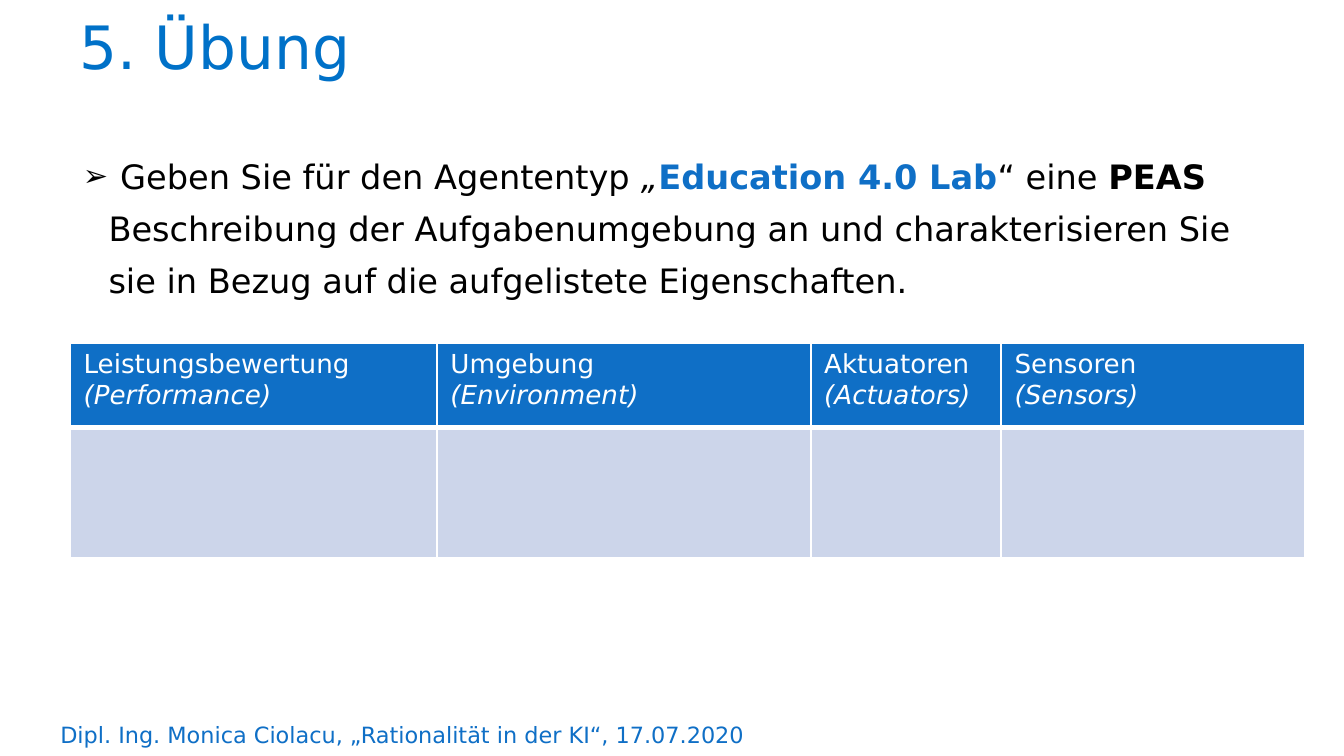
"""Build the exercise slide with a PEAS task and its answer table."""
from lxml.etree import SubElement as Sub
from pptx import Presentation
from pptx.dml.color import RGBColor as RGB
from pptx.oxml.ns import qn
from pptx.util import Pt

THEME = {
    "font": "DejaVu Sans",
    "title": "0071C8", "accent": "0F6FC6", "text": "000000",
    "light": "FFFFFF", "cell": "CCD5EA",
    "title_size": 32, "body_size": 18, "table_size": 14, "footer_size": 12,
}
TITLE = [("5. Übung", {})]
TASK = [
    (" ", {"bold": True}),
    ("Geben Sie für den Agententyp ", {}),
    ("„", {"italic": True}),
    ("Education 4.0 Lab", {"bold": True, "color": "accent"}),
    ("“ eine ", {}),
    ("PEAS", {"bold": True}),
    (" Beschreibung der Aufgabenumgebung an und charakterisieren Sie "
     "sie in Bezug auf die aufgelistete Eigenschaften.", {}),
]
FOOTER = [("Dipl. Ing. Monica Ciolacu, „Rationalität in der KI“, 17.07.2020", {})]
COLUMNS = [
    ("Leistungsbewertung", "(Performance)", 196.5),
    ("Umgebung", "(Environment)", 200.25),
    ("Aktuatoren", "(Actuators)", 102),
    ("Sensoren", "(Sensors)", 162.75),
]
ROWS = [45.4, 69.8]
TABLE_AT = (37.6, 183.6)
BOXES = [
    (FOOTER, (25.2, 383, 442.8, 21.6), "footer_size", "accent", {}),
    (TITLE, (37.4, 6.5, 439.2, 49.7), "title_size", "title",
     {"line_spacing": 0.9, "space_before": Pt(7.5)}),
    (TASK, (37.4, 73.4, 653, 220.3), "body_size", "text",
     {"line_spacing": 1.3, "space_before": Pt(7.5)}),
]
TITLE_INSETS = {"margin_left": 5, "margin_right": 5, "margin_top": 2.9, "margin_bottom": 2.9}


def apply(obj, values):
    for name, value in values.items():
        setattr(obj, name, value)


def add_runs(p, runs, size, color):
    for text, style in runs:
        r = p.add_run()
        r.text = text
        style = dict(style)
        r.font.color.rgb = RGB.from_string(THEME[style.pop("color", color)])
        apply(r.font, {"name": THEME["font"], "size": Pt(THEME[size]), **style})


def add_text(s, runs, at, size, color, spacing):
    tf = s.shapes.add_textbox(*map(Pt, at)).text_frame
    tf.word_wrap = True
    p = tf.paragraphs[0]
    apply(p, spacing)
    add_runs(p, runs, size, color)
    return tf


def add_bullet(p, char, indent, percent):
    pPr = p._p.get_or_add_pPr()
    pPr.set("marL", str(Pt(indent)))
    pPr.set("indent", str(-Pt(indent)))
    Sub(pPr, qn("a:buSzPct"), val=str(percent * 1000))
    Sub(pPr, qn("a:buFont"), typeface=THEME["font"])
    Sub(pPr, qn("a:buChar"), char=char)


def fill_cell(cell, color, top, bottom):
    tcPr = cell._tc.get_or_add_tcPr()
    for side, width in (("L", 1), ("R", 1), ("T", top), ("B", bottom)):
        ln = Sub(tcPr, qn(f"a:ln{side}"), w=str(Pt(width)))
        Sub(Sub(ln, qn("a:solidFill")), qn("a:srgbClr"), val=THEME["light"])
    cell.fill.solid()
    cell.fill.fore_color.rgb = RGB.from_string(THEME[color])


def add_peas_table(s):
    size = (sum(c[2] for c in COLUMNS), sum(ROWS))
    table = s.shapes.add_table(len(ROWS), len(COLUMNS), *map(Pt, TABLE_AT + size)).table
    for row, height in zip(table.rows, ROWS):
        row.height = Pt(height)
    for i, (german, english, width) in enumerate(COLUMNS):
        table.columns[i].width = Pt(width)
        head = table.cell(0, i)
        fill_cell(head, "accent", 1, 3)
        fill_cell(table.cell(1, i), "cell", 3, 1)
        tf = head.text_frame
        add_runs(tf.paragraphs[0], [(german, {"bold": False})], "table_size", "light")
        add_runs(tf.add_paragraph(), [(english, {"bold": False, "italic": True})],
                 "table_size", "light")


def main():
    prs = Presentation()
    apply(prs, {"slide_width": Pt(720), "slide_height": Pt(405)})
    s = prs.slides.add_slide(prs.slide_layouts[6])
    footer, title, task = [add_text(s, *box) for box in BOXES]
    apply(title, {name: Pt(value) for name, value in TITLE_INSETS.items()})
    add_bullet(task.paragraphs[0], "➢", 13.7, 90)
    add_peas_table(s)
    prs.save("out.pptx")


if __name__ == "__main__":
    main()
